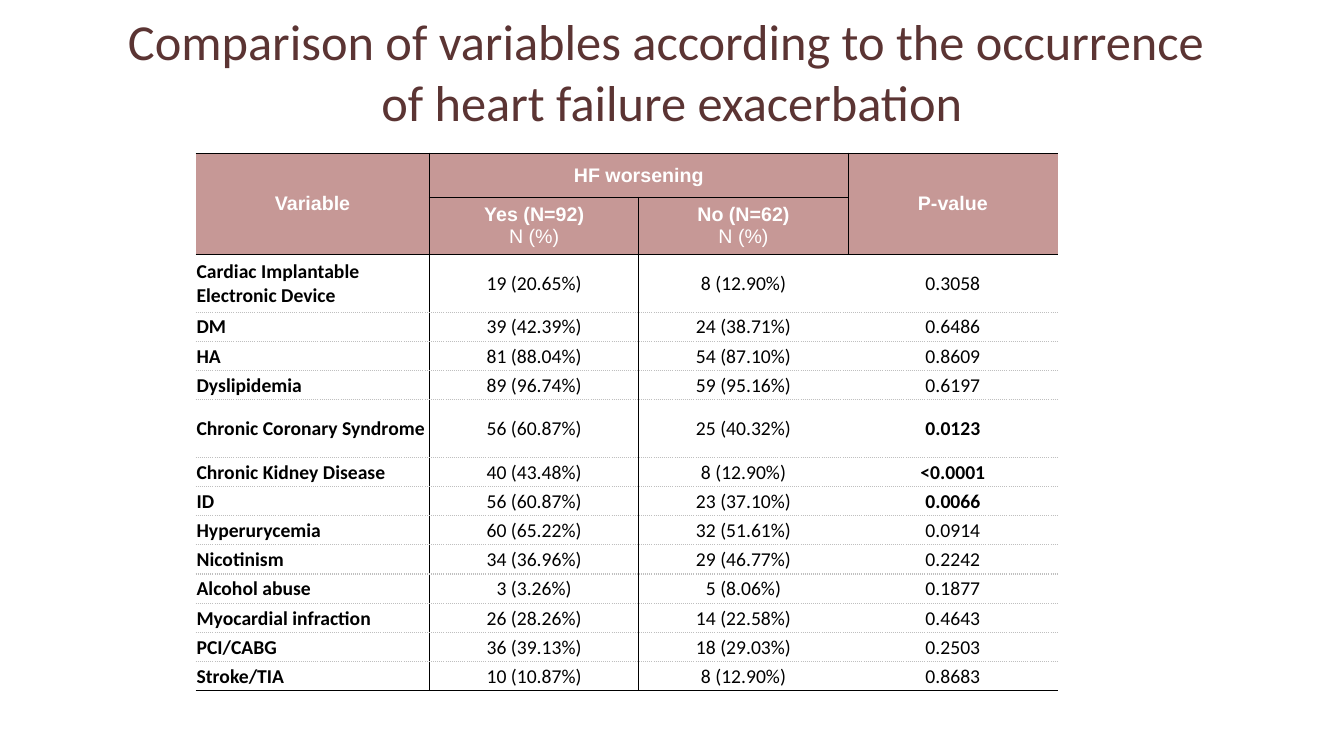
from lxml import etree
from pptx import Presentation, util as u
from pptx.dml.color import RGBColor
from pptx.enum import text
from pptx.oxml import parse_xml
from pptx.oxml.ns import nsdecls

BLACK, GREY, ROSE, WHITE, BROWN = "000000", "BFBFBF", "C69896", "FFFFFF", "5B3433"
NO_STYLE = "{2D5ABB26-0587-4C30-8999-92F81FD0307C}"
TITLE = ("Comparison of variables according to the occurrence \v"
         "of heart failure exacerbation")
HEADER = [
    ["Variable", "HF worsening", "", "P-value"],
    ["", "Yes (N=92)\nN (%)", "No (N=62)\nN (%)", ""],
]
BODY = [
    ["Cardiac Implantable Electronic Device", "19 (20.65%)", "8 (12.90%)", "0.3058"],
    ["DM", "39 (42.39%)", "24 (38.71%)", "0.6486"],
    ["HA", "81 (88.04%)", "54 (87.10%)", "0.8609"],
    ["Dyslipidemia", "89 (96.74%)", "59 (95.16%)", "0.6197"],
    ["Chronic Coronary Syndrome", "56 (60.87%)", "25 (40.32%)", "0.0123"],
    ["Chronic Kidney Disease", "40 (43.48%)", "8 (12.90%)", "<0.0001"],
    ["ID", "56 (60.87%)", "23 (37.10%)", "0.0066"],
    ["Hyperurycemia", "60 (65.22%)", "32 (51.61%)", "0.0914"],
    ["Nicotinism", "34 (36.96%)", "29 (46.77%)", "0.2242"],
    ["Alcohol abuse", "3 (3.26%)", "5 (8.06%)", "0.1877"],
    ["Myocardial infraction", "26 (28.26%)", "14 (22.58%)", "0.4643"],
    ["PCI/CABG", "36 (39.13%)", "18 (29.03%)", "0.2503"],
    ["Stroke/TIA", "10 (10.87%)", "8 (12.90%)", "0.8683"],
]
SIGNIFICANT = {"0.0123", "<0.0001", "0.0066"}
TALL_ROWS = {2, 6}


def rgb(value):
    """Turn a hex string into a colour."""
    return RGBColor.from_string(value)


def set_font(p, name, size, color, bold=False):
    """Set the font of a whole paragraph."""
    f = p.font
    f.name, f.size, f.bold = name, u.Pt(size), bold
    f.color.rgb = rgb(color)


def add_title(s, left, top, width, height):
    """Place the centred title with its faint outline and soft shadow."""
    tf = s.shapes.add_textbox(*map(u.Inches, (left, top, width, height))).text_frame
    tf.word_wrap = True
    tf.vertical_anchor = text.MSO_ANCHOR.MIDDLE
    tf.text = TITLE
    p = tf.paragraphs[0]
    p.alignment = text.PP_ALIGN.CENTER
    set_font(p, "Calibri", 36, BROWN)
    for r in p.runs:
        rPr = r.font._element if hasattr(r.font, "_element") else r._r.get_or_add_rPr()
        rPr.append(parse_xml(
            f'<a:ln {nsdecls("a")} w="9525"><a:solidFill><a:srgbClr val="404040">'
            '<a:alpha val="10000"/></a:srgbClr></a:solidFill></a:ln>'))
        rPr.append(parse_xml(
            f'<a:effectLst {nsdecls("a")}><a:outerShdw blurRad="38100" dist="38100" '
            'dir="2700000"><a:srgbClr val="000000"><a:alpha val="43000"/></a:srgbClr>'
            '</a:outerShdw></a:effectLst>'))


def add_border(cell, side, color, dash="solid"):
    """Draw a one-point line on one side of a cell."""
    cell._tc.get_or_add_tcPr().append(parse_xml(
        f'<a:ln{side} {nsdecls("a")} w="12700"><a:solidFill><a:srgbClr val="{color}"/>'
        f'</a:solidFill><a:prstDash val="{dash}"/></a:ln{side}>'))


def add_borders(cell, row, col, last):
    """Rule the cell: black around header and table, dotted between body rows."""
    dotted = (GREY, "sysDot")
    if col == 1:
        add_border(cell, "L", BLACK)
    if col == 0:
        add_border(cell, "R", BLACK)
    if not cell.is_spanned:
        add_border(cell, "T", *((BLACK,) if row <= 2 else dotted))
    add_border(cell, "B", *((BLACK,) if row in (0, 1, last) else dotted))


def fill_header(cell, words):
    """Write a header cell, bold on its first line only."""
    cell.fill.solid()
    cell.fill.fore_color.rgb = rgb(ROSE)
    if cell.is_spanned:
        return
    cell.text = words
    for i, p in enumerate(cell.text_frame.paragraphs):
        p.alignment = text.PP_ALIGN.CENTER
        set_font(p, "Arial", 14, WHITE, i == 0)


def fill_body(cell, words, col):
    """Write a body cell, bold for names and significant values."""
    cell.fill.background()
    cell.margin_left = cell.margin_right = cell.margin_top = u.Inches(0.01)
    cell.margin_bottom = 0
    cell.text = words
    p = cell.text_frame.paragraphs[0]
    p.alignment = text.PP_ALIGN.CENTER if col else text.PP_ALIGN.LEFT
    set_font(p, "Calibri", 14, BLACK, col == 0 or words in SIGNIFICANT)


def add_variables_table(s, left, top, width, height):
    """Place the table of variables with its two-row header."""
    rows = HEADER + BODY
    frame = s.shapes.add_table(len(rows), 4, *map(u.Inches, (left, top, width, height)))
    tbl = frame.table
    tbl.first_row = tbl.horz_banding = False
    tbl._tbl.tblPr[0].text = NO_STYLE
    first = 2.32
    for i, column in enumerate(tbl.columns):
        column.width = u.Inches((width - first) / 3 if i else first)
    for i, row in enumerate(tbl.rows):
        header_height = (0.44, 0.54)[i] if i < 2 else 0.29
        row.height = u.Inches(0.57 if i in TALL_ROWS else header_height)
    for start, end in (((0, 0), (1, 0)), ((0, 1), (0, 2)), ((0, 3), (1, 3))):
        tbl.cell(*start).merge(tbl.cell(*end))
    for i, row in enumerate(rows):
        for j, words in enumerate(row):
            cell = tbl.cell(i, j)
            cell.vertical_anchor = text.MSO_ANCHOR.MIDDLE
            add_borders(cell, i, j, len(rows) - 1)
            if i < len(HEADER):
                fill_header(cell, words)
            else:
                fill_body(cell, words, j)


def main():
    """Build the slide and save it."""
    prs = Presentation()
    prs.slide_width, prs.slide_height = u.Inches(13.33), u.Inches(7.5)
    s = prs.slides.add_slide(prs.slide_layouts[6])
    add_title(s, 0, 0.22, 13.33, 0.97)
    add_variables_table(s, 1.94, 1.52, 8.55, 5.3)
    prs.save("out.pptx")


if __name__ == "__main__":
    main()
